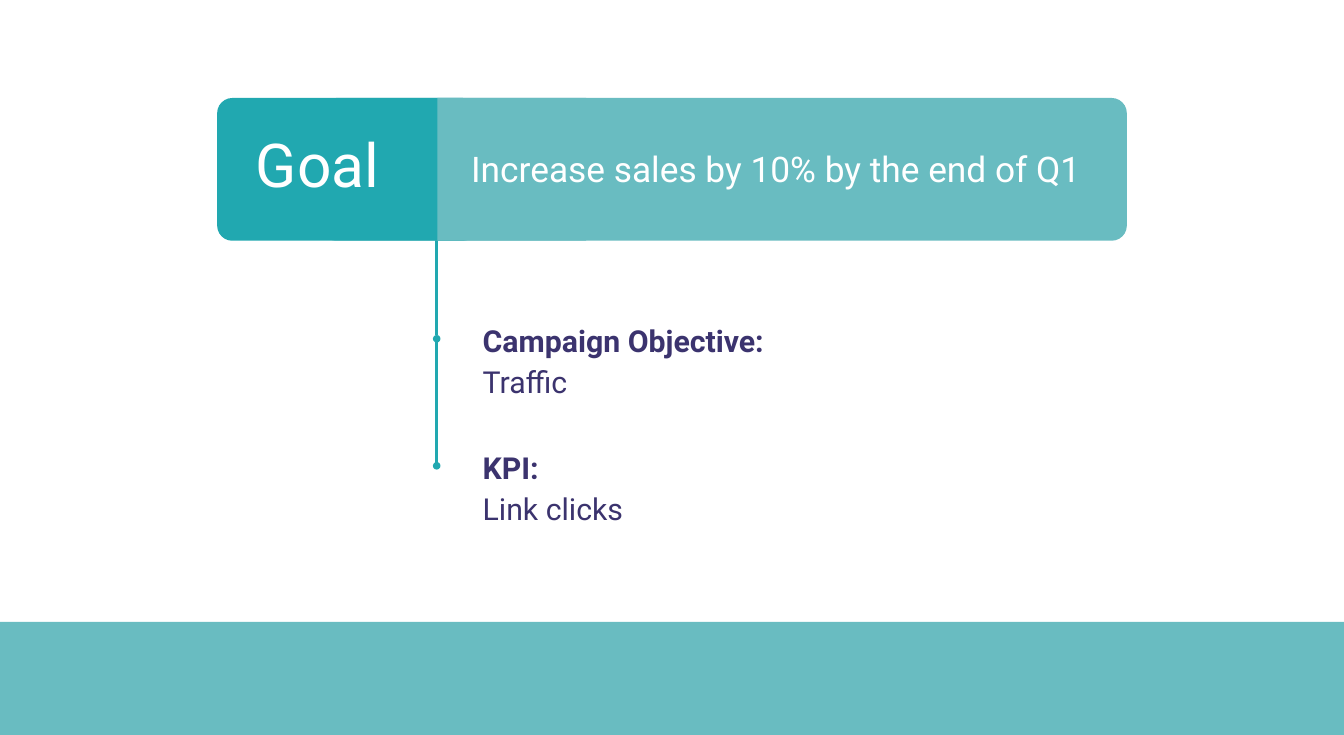
import lxml.etree
import pptx
import pptx.dml.color
import pptx.enum.shapes
import pptx.enum.text
import pptx.oxml.ns
import pptx.util

Inches = pptx.util.Inches
Pt = pptx.util.Pt
RGBColor = pptx.dml.color.RGBColor
SHAPE = pptx.enum.shapes.MSO_SHAPE

TEAL = RGBColor(0x21, 0xA8, 0xB0)
LIGHT_TEAL = RGBColor(0x69, 0xBC, 0xC1)
PURPLE = RGBColor(0x3B, 0x33, 0x6E)
WHITE = RGBColor(0xFF, 0xFF, 0xFF)

SLIDE_W, SLIDE_H = 22.22, 12.15
DETAILS = [("Campaign Objective:", "Traffic"), ("KPI:", "Link clicks")]


def add_block(s, kind, x, y, w, h, color, radius=None):
    sp = s.shapes.add_shape(kind, Inches(x), Inches(y), Inches(w), Inches(h))
    sp.shadow.inherit = False
    sp.fill.solid()
    sp.fill.fore_color.rgb = color
    sp.line.fill.background()
    if radius is not None:
        sp.adjustments[0] = radius


def set_text(sp, lines, size, color, inset, bold_first=False, spacing=1.0):
    tf = sp.text_frame
    tf.word_wrap = True
    tf.auto_size = pptx.enum.text.MSO_AUTO_SIZE.NONE
    tf.vertical_anchor = pptx.enum.text.MSO_ANCHOR.MIDDLE
    tf.margin_left = tf.margin_right = Inches(inset)
    tf.margin_top = tf.margin_bottom = Inches(inset)
    tf.text = "\n".join(lines)
    for i, p in enumerate(tf.paragraphs):
        p.alignment = pptx.enum.text.PP_ALIGN.LEFT
        p.line_spacing = spacing
        p.font.name = "Roboto"
        p.font.size = Pt(size)
        p.font.bold = bold_first and i == 0
        p.font.color.rgb = color


def add_textbox(s, x, y, w, h):
    return s.shapes.add_textbox(Inches(x), Inches(y), Inches(w), Inches(h))


def add_dotted_line(s, x, y1, y2):
    line = s.shapes.add_connector(pptx.enum.shapes.MSO_CONNECTOR.STRAIGHT,
                                  Inches(x), Inches(y1), Inches(x), Inches(y2))
    line.line.color.rgb = TEAL
    line.line.width = Pt(3)
    qn = pptx.oxml.ns.qn
    # Round dot at the lower end, no shadow
    lxml.etree.SubElement(line.line._get_or_add_ln(), qn("a:tailEnd"), type="oval")
    lxml.etree.SubElement(line.element.spPr, qn("a:effectLst"))


def add_details(s, x, y, step):
    """Timeline from (x, y) with one labelled dot every step."""
    for i, lines in enumerate(DETAILS):
        dot_y = y + step * (i + 1)
        add_dotted_line(s, x, dot_y - step, dot_y)
        sp = add_textbox(s, x + 0.54, dot_y - 0.43, 6.92, 1.5)
        set_text(sp, lines, 36, PURPLE, 0.22, bold_first=True, spacing=1.15)


def add_goal_banner(s, x, y, w, h):
    split = x + 3.64
    # Rounded ends, with a square block marking the split
    add_block(s, SHAPE.ROUNDED_RECTANGLE, x + 1.72, y, w - 1.72, h, LIGHT_TEAL, 0.106)
    add_block(s, SHAPE.ROUNDED_RECTANGLE, x, y, 4.31, h, TEAL, 0.106)
    add_block(s, SHAPE.RECTANGLE, split, y, 2.46, h, LIGHT_TEAL)

    # Goal statement
    sp = add_textbox(s, split + 0.34, y + 0.09, 10.87, 2.16)
    set_text(sp, ["Increase sales by 10% by the end of Q1"], 42, WHITE, 0.22)

    # Title, brought in front of the banner
    title = s.shapes.title
    title.left, title.top = Inches(x + 0.54), Inches(y + 0.02)
    title.width, title.height = Inches(2.62), Inches(2.13)
    set_text(title, ["Goal"], 72, WHITE, 0.1)
    s.shapes.element.append(title.element)


def main():
    prs = pptx.Presentation()
    prs.slide_width, prs.slide_height = Inches(SLIDE_W), Inches(SLIDE_H)
    s = prs.slides.add_slide(prs.slide_layouts.get_by_name("Title Only"))

    # Bottom band
    add_block(s, SHAPE.RECTANGLE, 0, 10.28, SLIDE_W, SLIDE_H - 10.28, LIGHT_TEAL)
    add_details(s, 7.22, 3.5, 2.1)
    add_goal_banner(s, 3.59, 1.62, 15.04, 2.36)
    prs.save("out.pptx")


if __name__ == "__main__":
    main()
